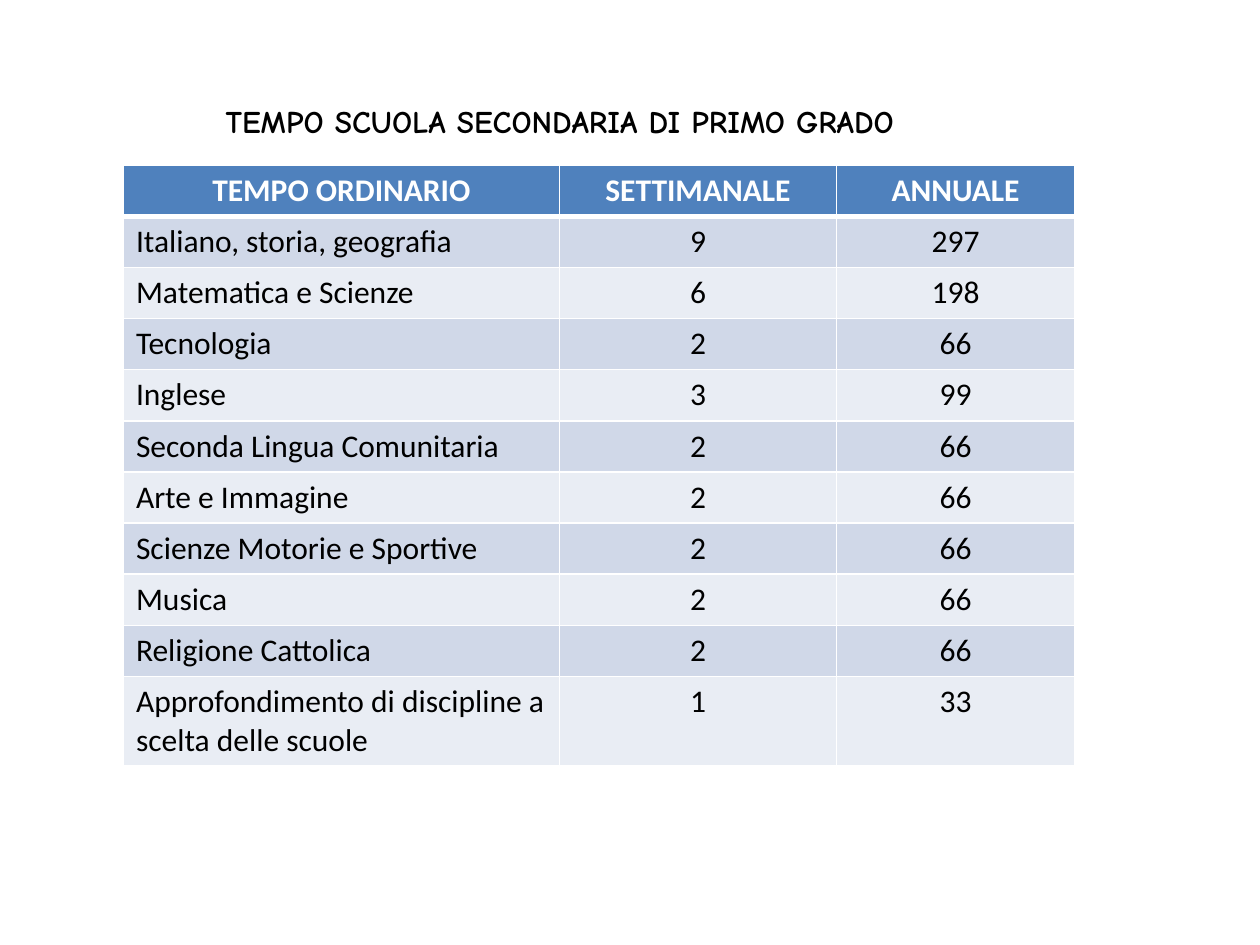
from pptx import Presentation
from pptx.dml.color import RGBColor
from pptx.enum.text import MSO_ANCHOR, PP_ALIGN
from pptx.oxml import parse_xml
from pptx.oxml.ns import nsdecls
from pptx.util import Inches, Pt

COLORS = {
    "header": "4F81BD",
    "odd_row": "D0D8E8",
    "even_row": "E9EDF4",
    "white": "FFFFFF",
    "black": "000000",
}
TITLE = "TEMPO SCUOLA SECONDARIA DI PRIMO GRADO"
TIMETABLE = [
    ("TEMPO ORDINARIO", "SETTIMANALE", "ANNUALE"),
    ("Italiano, storia, geografia", "9", "297"),
    ("Matematica e Scienze", "6", "198"),
    ("Tecnologia", "2", "66"),
    ("Inglese", "3", "99"),
    ("Seconda Lingua Comunitaria", "2", "66"),
    ("Arte e Immagine", "2", "66"),
    ("Scienze Motorie e Sportive", "2", "66"),
    ("Musica", "2", "66"),
    ("Religione Cattolica", "2", "66"),
    ("Approfondimento di discipline a scelta delle scuole", "1", "33"),
]
COLUMN_WIDTHS = (3.46, 2.2, 1.89)
TABLE_HEIGHT = 4.76
LAST_ROW_HEIGHT = 0.7  # two lines of text


def add_text(text_frame, text, font_name, color, bold, alignment):
    paragraph = text_frame.paragraphs[0]
    paragraph.alignment = alignment
    run = paragraph.add_run()
    run.text = text
    run.font.name = font_name
    run.font.size = Pt(18)
    run.font.bold = bold
    run.font.color.rgb = RGBColor.from_string(COLORS[color])


def add_title(slide):
    title = slide.shapes.title
    title.left, title.top = Inches(1.69), Inches(0.76)
    title.width, title.height = Inches(6.61), Inches(0.4)
    title.text_frame.word_wrap = True
    title.text_frame.vertical_anchor = MSO_ANCHOR.TOP
    add_text(title.text_frame, TITLE, "Comic Neue", "black", True, PP_ALIGN.LEFT)


def set_borders(cell, bottom_width):
    properties = cell._tc.get_or_add_tcPr()
    widths = {"lnL": 1, "lnR": 1, "lnT": 1, "lnB": bottom_width}
    # Border elements come before the fill
    for position, (side, width) in enumerate(widths.items()):
        properties.insert(position, parse_xml(
            f'<a:{side} {nsdecls("a")} w="{Pt(width)}"><a:solidFill>'
            f'<a:srgbClr val="{COLORS["white"]}"/></a:solidFill></a:{side}>'))


def format_cell(cell, text, row_index, column_index):
    is_header = row_index == 0
    fill = "header" if is_header else "odd_row" if row_index % 2 else "even_row"
    cell.fill.solid()
    cell.fill.fore_color.rgb = RGBColor.from_string(COLORS[fill])
    # The line under the header, shared with the first row, is thicker
    set_borders(cell, 3 if is_header else 1)
    is_subject = column_index == 0 and not is_header
    add_text(cell.text_frame, text, "Calibri",
             "white" if is_header else "black", is_header,
             PP_ALIGN.LEFT if is_subject else PP_ALIGN.CENTER)


def add_timetable(slide):
    table = slide.shapes.add_table(
        len(TIMETABLE), len(COLUMN_WIDTHS), Inches(0.98), Inches(1.31),
        Inches(sum(COLUMN_WIDTHS)), Inches(TABLE_HEIGHT)).table
    for column, width in zip(table.columns, COLUMN_WIDTHS):
        column.width = Inches(width)
    row_height = (TABLE_HEIGHT - LAST_ROW_HEIGHT) / (len(TIMETABLE) - 1)
    for row in table.rows:
        row.height = Inches(row_height)
    table.rows[len(TIMETABLE) - 1].height = Inches(LAST_ROW_HEIGHT)
    for row_index, texts in enumerate(TIMETABLE):
        for column_index, text in enumerate(texts):
            cell = table.cell(row_index, column_index)
            format_cell(cell, text, row_index, column_index)
            if row_index == 1:
                cell._tc.tcPr[2].set("w", str(Pt(3)))


def main():
    presentation = Presentation()
    presentation.slide_width = Inches(10)
    presentation.slide_height = Inches(7.5)
    slide = presentation.slides.add_slide(presentation.slide_layouts[5])
    add_title(slide)
    add_timetable(slide)
    presentation.save("out.pptx")


if __name__ == "__main__":
    main()
